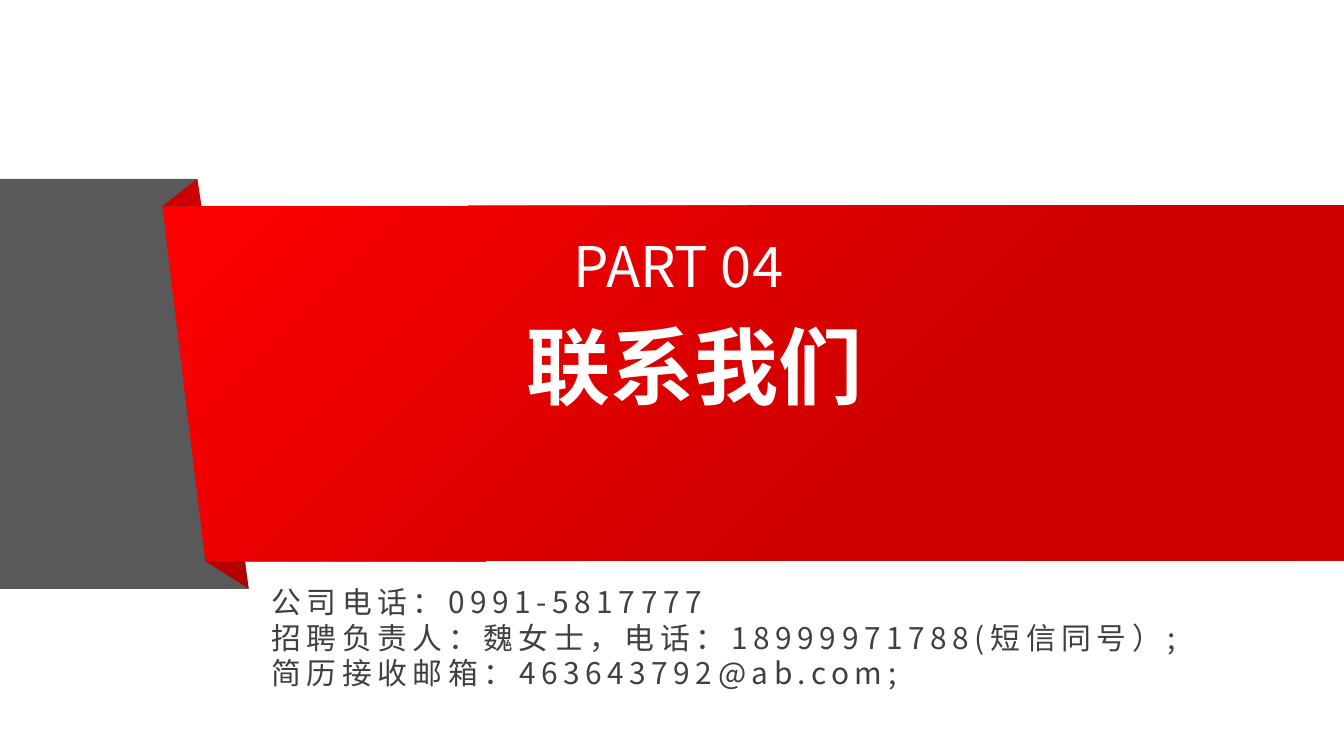
from dataclasses import dataclass

from lxml import etree
from pptx import Presentation
from pptx import util as u
from pptx.dml.color import RGBColor
from pptx.enum import text
from pptx.oxml import ns


@dataclass(frozen=True)
class Theme:
    font: str = "Noto Sans CJK SC"
    grey: str = "595959"
    bright_red: str = "FF0000"
    red: str = "CC0000"
    dark_red: str = "B40000"
    white: str = "FFFFFF"
    ink: str = "404040"
    title_size: int = 45
    part_size: int = 30
    contact_size: int = 16


class SlideBuilder:
    def __init__(self, slide, theme):
        self.slide = slide
        self.theme = theme

    def polygon(self, points, color):
        """Draw a closed outline through points given in centimetres."""
        start, *others = [(u.Cm(x), u.Cm(y)) for x, y in points]
        outline = self.slide.shapes.build_freeform(*start)
        outline.add_line_segments(others, close=True)
        shape = outline.convert_to_shape()
        shape.shadow.inherit = False
        shape.line.fill.background()
        shape.fill.solid()
        shape.fill.fore_color.rgb = RGBColor.from_string(color)
        return shape

    def gradient(self, shape, stops, angle):
        shape.fill.gradient()
        shape.fill.gradient_angle = angle
        for stop, (position, color) in zip(shape.fill.gradient_stops, stops):
            stop.position = position
            stop.color.rgb = RGBColor.from_string(color)

    def text_box(self, place, lines, size, color, bold=False, spacing=0,
                 align=text.PP_ALIGN.CENTER, insets=(0.18, 0.1)):
        box = self.slide.shapes.add_textbox(*map(u.Cm, place))
        frame = box.text_frame
        frame.word_wrap = True
        frame.margin_left = frame.margin_right = u.Cm(insets[0])
        frame.margin_top = frame.margin_bottom = u.Cm(insets[1])
        frame.text = "\n".join(lines)
        for paragraph in frame.paragraphs:
            paragraph.alignment = align
            for run in paragraph.runs:
                run.font.size = u.Pt(size)
                run.font.bold = bold
                run.font.name = self.theme.font
                run.font.color.rgb = RGBColor.from_string(color)
                # East Asian typeface and letter spacing
                properties = run.font._element
                east_asian = etree.SubElement(properties, ns.qn("a:ea"))
                east_asian.set("typeface", self.theme.font)
                if spacing:
                    properties.set("spc", str(spacing * 100))


def main():
    deck = Presentation()
    deck.slide_width, deck.slide_height = u.Cm(25.4), u.Cm(14.29)
    theme = Theme()
    builder = SlideBuilder(deck.slides.add_slide(deck.slide_layouts[6]), theme)

    # Ribbon corners
    panel_top, panel_bottom = (3.73, 3.38), (4.7, 11.13)
    banner_top, banner_bottom = (3.07, 3.9), (3.89, 10.61)

    # Grey panel
    builder.polygon([panel_top, (0, 3.38), (0, 11.13), panel_bottom], theme.grey)

    # Red banner
    banner = builder.polygon(
        [(25.4, 3.88), banner_top, banner_bottom, (25.4, 10.59)], theme.red)
    builder.gradient(banner, [(0, theme.bright_red), (0.66, theme.red)], 315)

    # Folds of the ribbon
    builder.polygon([(3.81, 3.9), panel_top, banner_top], theme.red)
    builder.polygon([panel_bottom, (4.62, 10.61), banner_bottom], theme.dark_red)

    # Section title
    builder.text_box((9.75, 5.84, 6.76, 2.11), ["联系我们"],
                     theme.title_size, theme.white, bold=True)
    builder.text_box((9.6, 4.27, 6.45, 1.47), ["PART 04"],
                     theme.part_size, theme.white)

    # Contact details
    contacts = [
        "公司电话：0991-5817777",
        "招聘负责人：魏女士，电话：18999971788(短信同号）;",
        "简历接收邮箱：463643792@ab.com;",
    ]
    builder.text_box((4.88, 10.9, 18.4, 2.31), contacts,
                     theme.contact_size, theme.ink, spacing=3,
                     align=text.PP_ALIGN.LEFT, insets=(0.25, 0.13))

    deck.save("out.pptx")


if __name__ == "__main__":
    main()
